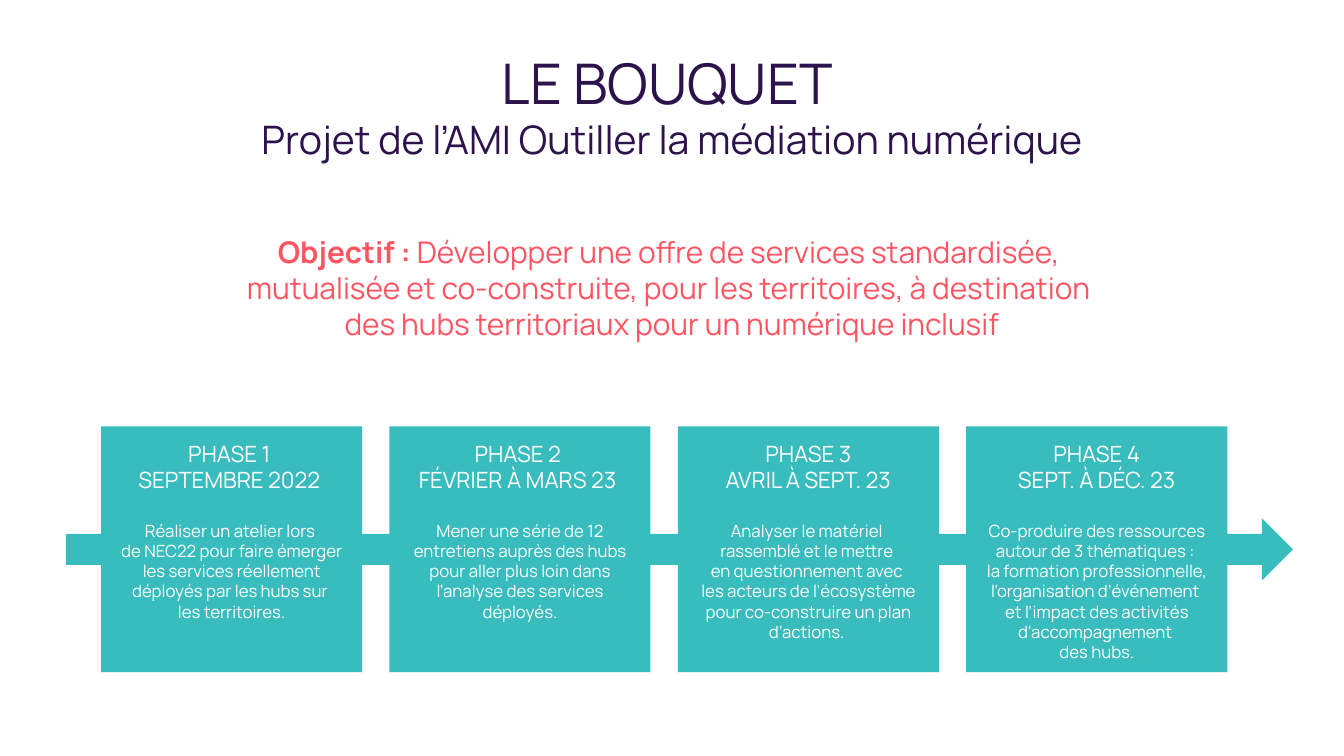
import dataclasses

import pptx
import pptx.dml.color
import pptx.enum.shapes
import pptx.enum.text
import pptx.util

Pt = pptx.util.Pt


@dataclasses.dataclass(frozen=True)
class Theme:
    """Colours, type sizes and font of the slide."""

    font: str = "Manrope"
    purple: str = "2D134B"
    coral: str = "FF5563"
    teal: str = "39BCBD"
    white: str = "FFFFFF"
    title_size: int = 30
    subtitle_size: int = 21
    goal_size: int = 16
    phase_size: int = 12
    detail_size: int = 9


THEME = Theme()

TITLE = "LE BOUQUET "
SUBTITLE = "Projet de l’AMI Outiller la médiation numérique"
GOAL_LABEL = "Objectif : "
GOAL_LINES = [
    "Développer une offre de services standardisée, ",
    "mutualisée et co-construite, pour les territoires, à destination ",
    "des hubs territoriaux pour un numérique inclusif",
]
PHASES = [
    (["PHASE 1 ", "SEPTEMBRE 2022 "],
     ["Réaliser un atelier lors ",
      "de NEC22 pour faire émerger les services réellement déployés par les hubs sur ",
      "les territoires."]),
    (["PHASE 2 ", "FÉVRIER À MARS 23 "],
     ["Mener une série de 12 entretiens auprès des hubs pour aller plus loin dans "
      "l’analyse des services déployés."]),
    (["PHASE 3", "AVRIL À SEPT. 23"],
     ["Analyser le matériel ",
      "rassemblé et le mettre ",
      "en questionnement avec ",
      "les acteurs de l’écosystème pour co-construire un plan d’actions. "]),
    (["PHASE 4", "SEPT. À DÉC. 23"],
     ["Co-produire des ressources autour de 3 thématiques : ",
      "la formation professionnelle, l’organisation d’événement ",
      "et l’impact des activités d'accompagnement ",
      "des hubs."]),
]


def apply_format(target, values):
    """Set each named attribute of the target."""
    for name, value in values.items():
        setattr(target, name, value)


def prepare_frame(frame, inset):
    """Give a text frame equal insets, wrapping and a top anchor."""
    margins = {f"margin_{side}": Pt(inset) for side in ("left", "top", "right", "bottom")}
    apply_format(frame, {
        **margins,
        "word_wrap": True,
        "auto_size": pptx.enum.text.MSO_AUTO_SIZE.NONE,
        "vertical_anchor": pptx.enum.text.MSO_ANCHOR.TOP,
    })


def write_lines(frame, lines, color):
    """Write centred lines, each a gap above and a list of (text, size, bold) runs."""
    for index, (gap, runs) in enumerate(lines):
        paragraph = frame.add_paragraph() if index else frame.paragraphs[0]
        apply_format(paragraph, {
            "alignment": pptx.enum.text.PP_ALIGN.CENTER,
            "space_before": Pt(gap),
        })
        for text, size, bold in runs:
            run = paragraph.add_run()
            run.text = text
            apply_format(run.font, {"name": THEME.font, "size": Pt(size), "bold": bold})
            run.font.color.rgb = pptx.dml.color.RGBColor.from_string(color)


def add_block(slide, kind, left, top, width, height):
    """Add a flat teal shape."""
    shape = slide.shapes.add_shape(kind, Pt(left), Pt(top), Pt(width), Pt(height))
    shape.shadow.inherit = False
    shape.fill.solid()
    shape.fill.fore_color.rgb = pptx.dml.color.RGBColor.from_string(THEME.teal)
    shape.line.fill.background()
    return shape


def place_title(slide, left, top, width, height):
    """Place the title and its subtitle in the title placeholder."""
    title = slide.shapes.title
    apply_format(title, {"left": Pt(left), "top": Pt(top),
                         "width": Pt(width), "height": Pt(height)})
    prepare_frame(title.text_frame, 3.6)
    write_lines(title.text_frame, [
        (0, [(TITLE, THEME.title_size, False)]),
        (0, [(SUBTITLE, THEME.subtitle_size, False)]),
    ], THEME.purple)


def place_goal(slide, left, top, width, height):
    """Place the project goal with its bold label."""
    box = slide.shapes.add_textbox(Pt(left), Pt(top), Pt(width), Pt(height))
    prepare_frame(box.text_frame, 3.6)
    lines = [(0, [(text, THEME.goal_size, False)]) for text in GOAL_LINES]
    lines[0][1].insert(0, (GOAL_LABEL, THEME.goal_size, True))
    write_lines(box.text_frame, lines, THEME.coral)


def place_phase(slide, headings, details, left, top, width, height):
    """Place one phase card with its headings and details."""
    card = add_block(slide, pptx.enum.shapes.MSO_SHAPE.RECTANGLE, left, top, width, height)
    prepare_frame(card.text_frame, 7.2)
    lines = [(0, [(text, THEME.phase_size, False)]) for text in headings]
    for index, text in enumerate(details):
        gap = 0 if index else THEME.phase_size * 1.2
        lines.append((gap, [(text, THEME.detail_size, False)]))
    write_lines(card.text_frame, lines, THEME.white)


def place_timeline(slide, left, top, width, height):
    """Place the arrow and the evenly spaced phase cards over it."""
    arrow_height, card_width, gap = 33.2, 139.9, 14.6
    add_block(slide, pptx.enum.shapes.MSO_SHAPE.RIGHT_ARROW,
              left, top + (height - arrow_height) / 2, width, arrow_height)
    first_card = left + 18.8
    for index, (headings, details) in enumerate(PHASES):
        place_phase(slide, headings, details,
                    first_card + index * (card_width + gap), top, card_width, height)


def main():
    """Build and save the slide."""
    presentation = pptx.Presentation()
    apply_format(presentation, {"slide_width": Pt(720), "slide_height": Pt(405)})
    slide = presentation.slides.add_slide(presentation.slide_layouts.get_by_name("Title Only"))
    place_title(slide, 0, 22.3, 720, 80.6)
    place_goal(slide, 0, 121.7, 720, 65.5)
    place_timeline(slide, 35.3, 228.4, 657.4, 131.8)
    presentation.save("out.pptx")


if __name__ == "__main__":
    main()
